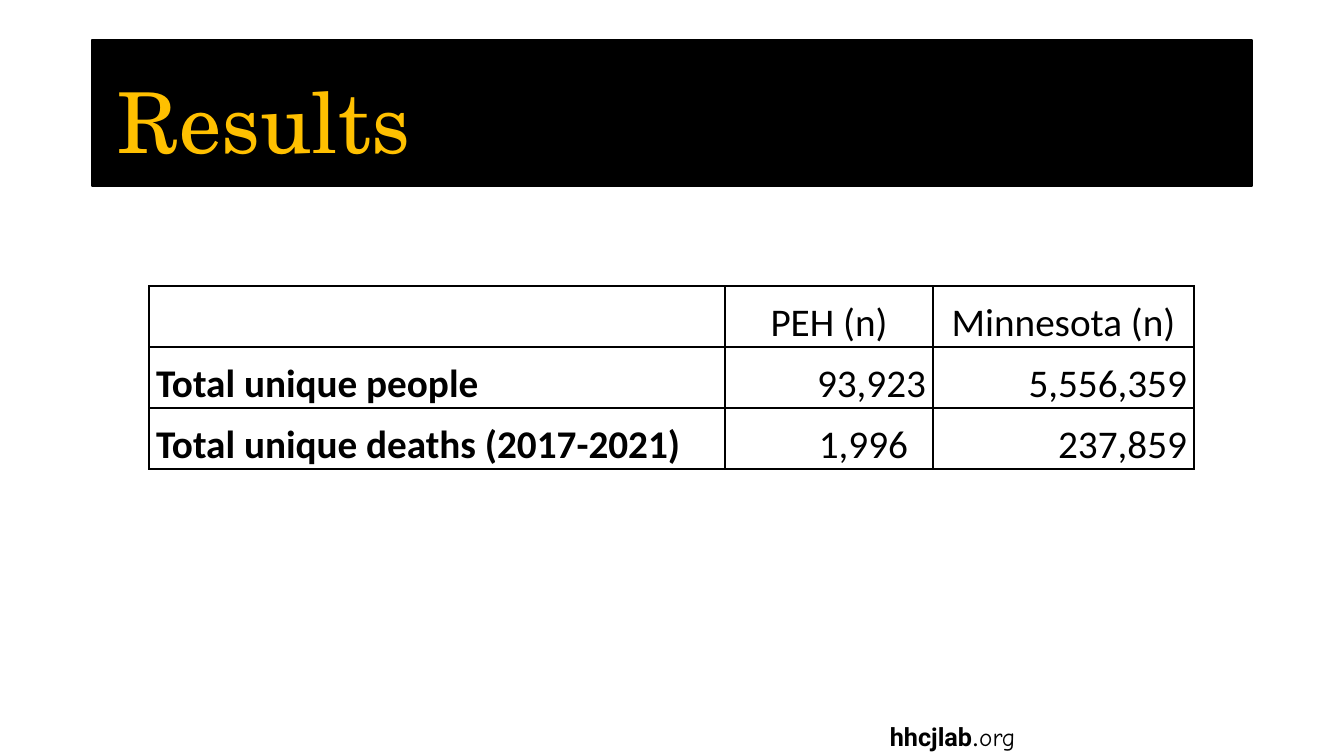
from typing import NamedTuple

from lxml.etree import SubElement
from pptx import Presentation
from pptx.dml.color import RGBColor
from pptx.enum.shapes import MSO_CONNECTOR, MSO_SHAPE
from pptx.enum.text import MSO_ANCHOR, PP_ALIGN
from pptx.oxml import parse_xml
from pptx.oxml.ns import nsdecls, qn
from pptx.util import Emu, Pt

BLACK = RGBColor(0x00, 0x00, 0x00)
GOLD = RGBColor(0xFF, 0xC0, 0x00)
SERIF = "TeX Gyre Schola"
EMU_PER_PX = 914400 / 100.8

TABLE_LEFT, TABLE_TOP = 149, 286
COLUMN_WIDTHS = (576, 208, 261)
ROW_HEIGHT = 61
CELL_INSET = 7


class Run(NamedTuple):
    text: str
    font: str
    bold: bool = False


class Entry(NamedTuple):
    text: str
    align: PP_ALIGN = PP_ALIGN.RIGHT
    bold: bool = False
    right_inset: int = CELL_INSET


ROWS = (
    (Entry(""), Entry("PEH (n)", PP_ALIGN.CENTER), Entry("Minnesota (n)", PP_ALIGN.CENTER)),
    (Entry("Total unique people", PP_ALIGN.LEFT, bold=True), Entry("93,923"), Entry("5,556,359")),
    (
        Entry("Total unique deaths (2017-2021)", PP_ALIGN.LEFT, bold=True),
        Entry("1,996", right_inset=25),
        Entry("237,859"),
    ),
)


def px(length: int) -> Emu:
    return Emu(round(length * EMU_PER_PX))


def write(frame, runs, *, size, color=BLACK, align=PP_ALIGN.LEFT,
          anchor=MSO_ANCHOR.TOP, spacing=1.0) -> None:
    frame.vertical_anchor = anchor
    paragraph = frame.paragraphs[0]
    paragraph.alignment = align
    paragraph.line_spacing = spacing
    for part in runs:
        run = paragraph.add_run()
        run.text = part.text
        run.font.name = part.font
        run.font.size = Pt(size)
        run.font.bold = part.bold
        run.font.color.rgb = color


def add_borders(cell, sides: str) -> None:
    """Draw thin black borders; sides holds letters from L, R, T, B in that order."""
    properties = cell._tc.get_or_add_tcPr()
    for side in sides:
        properties.append(parse_xml(
            f'<a:ln{side} {nsdecls("a")} w="{Pt(1)}"><a:solidFill>'
            f'<a:srgbClr val="{BLACK}"/></a:solidFill></a:ln{side}>'
        ))


def add_title(slide) -> None:
    band = slide.shapes.add_shape(MSO_SHAPE.RECTANGLE, px(92), px(40), px(1160), px(146))
    band.shadow.inherit = False
    band.fill.solid()
    band.fill.fore_color.rgb = BLACK
    band.line.color.rgb = BLACK
    band.line.width = Pt(1)

    title = slide.shapes.add_textbox(px(108), px(40), px(1160), px(137)).text_frame
    title.word_wrap = True
    write(title, [Run("Results", SERIF)], size=60, color=GOLD,
          anchor=MSO_ANCHOR.BOTTOM, spacing=0.9)


def add_footer(slide) -> None:
    address = slide.shapes.add_textbox(px(880), px(716), px(170), px(40)).text_frame
    address.word_wrap = False
    write(address, [Run("hhcjlab", "Roboto", bold=True), Run(".", SERIF),
                    Run("org", "Comic Neue")], size=18)


def add_counts(slide) -> None:
    width = sum(COLUMN_WIDTHS)
    counts = slide.shapes.add_table(
        len(ROWS), len(COLUMN_WIDTHS), px(TABLE_LEFT), px(TABLE_TOP),
        px(width), px(ROW_HEIGHT * len(ROWS)),
    ).table
    counts.first_row = False
    counts.horz_banding = False
    for column, column_width in zip(counts.columns, COLUMN_WIDTHS):
        column.width = px(column_width)
    for row_index, entries in enumerate(ROWS):
        counts.rows[row_index].height = px(ROW_HEIGHT)
        for column_index, entry in enumerate(entries):
            cell = counts.cell(row_index, column_index)
            add_borders(cell, "LRTB" if row_index else "LRB")
            cell.fill.background()
            cell.margin_left = px(CELL_INSET)
            cell.margin_right = px(entry.right_inset)
            cell.margin_top = cell.margin_bottom = 0
            cell.vertical_anchor = MSO_ANCHOR.BOTTOM
            if entry.text:
                write(cell.text_frame, [Run(entry.text, "Calibri", entry.bold)], size=28,
                      align=entry.align, anchor=None, spacing=1.07)

    top_rule = slide.shapes.add_connector(
        MSO_CONNECTOR.STRAIGHT, px(TABLE_LEFT), px(TABLE_TOP),
        px(TABLE_LEFT + width), px(TABLE_TOP),
    )
    top_rule.line.color.rgb = BLACK
    top_rule.line.width = Pt(1)
    SubElement(top_rule._element.spPr, qn("a:effectLst"))


def main() -> None:
    presentation = Presentation()
    presentation.slide_width = px(1344)
    presentation.slide_height = px(756)
    slide = presentation.slides.add_slide(presentation.slide_layouts[6])
    add_title(slide)
    add_footer(slide)
    add_counts(slide)
    presentation.save("out.pptx")


if __name__ == "__main__":
    main()
